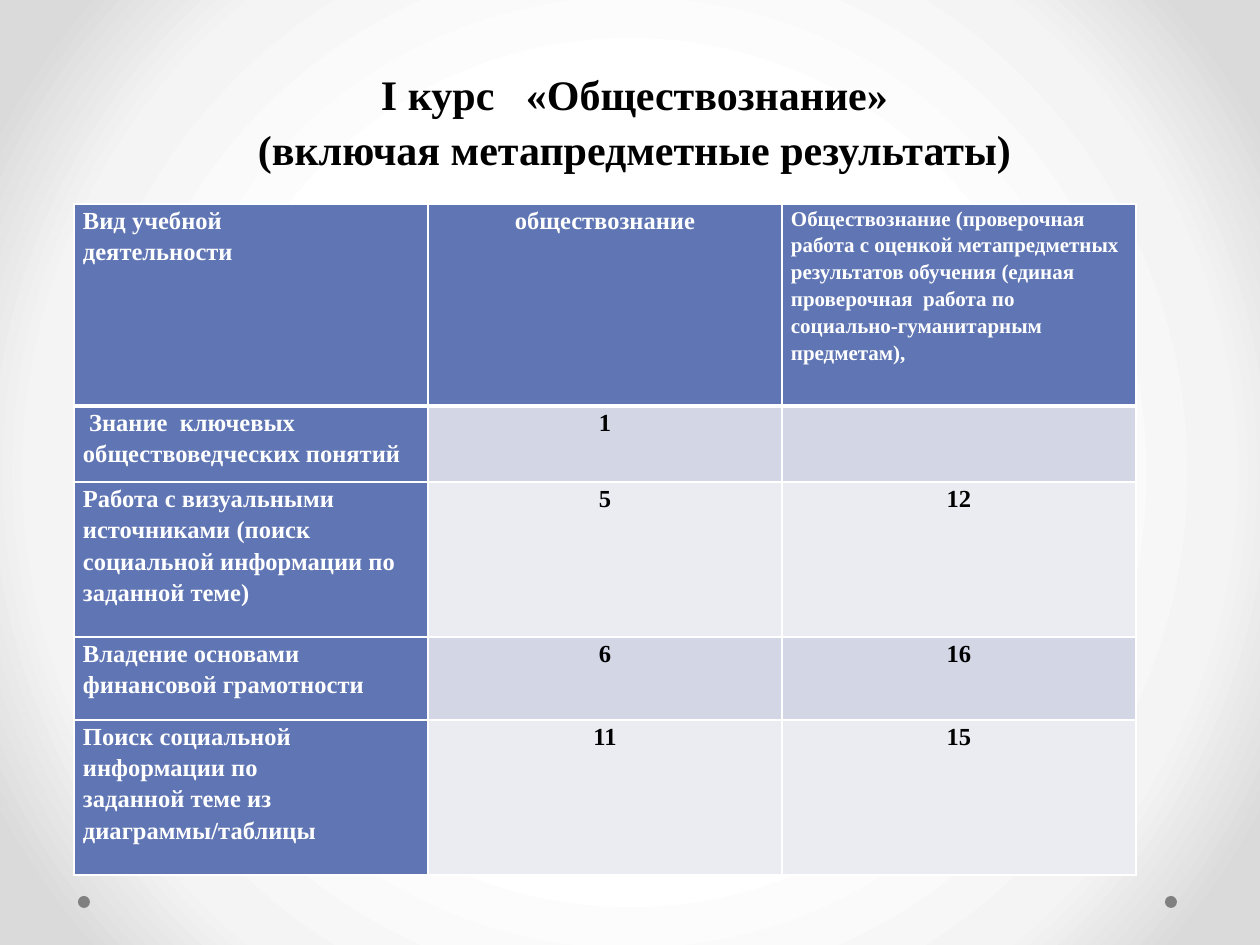
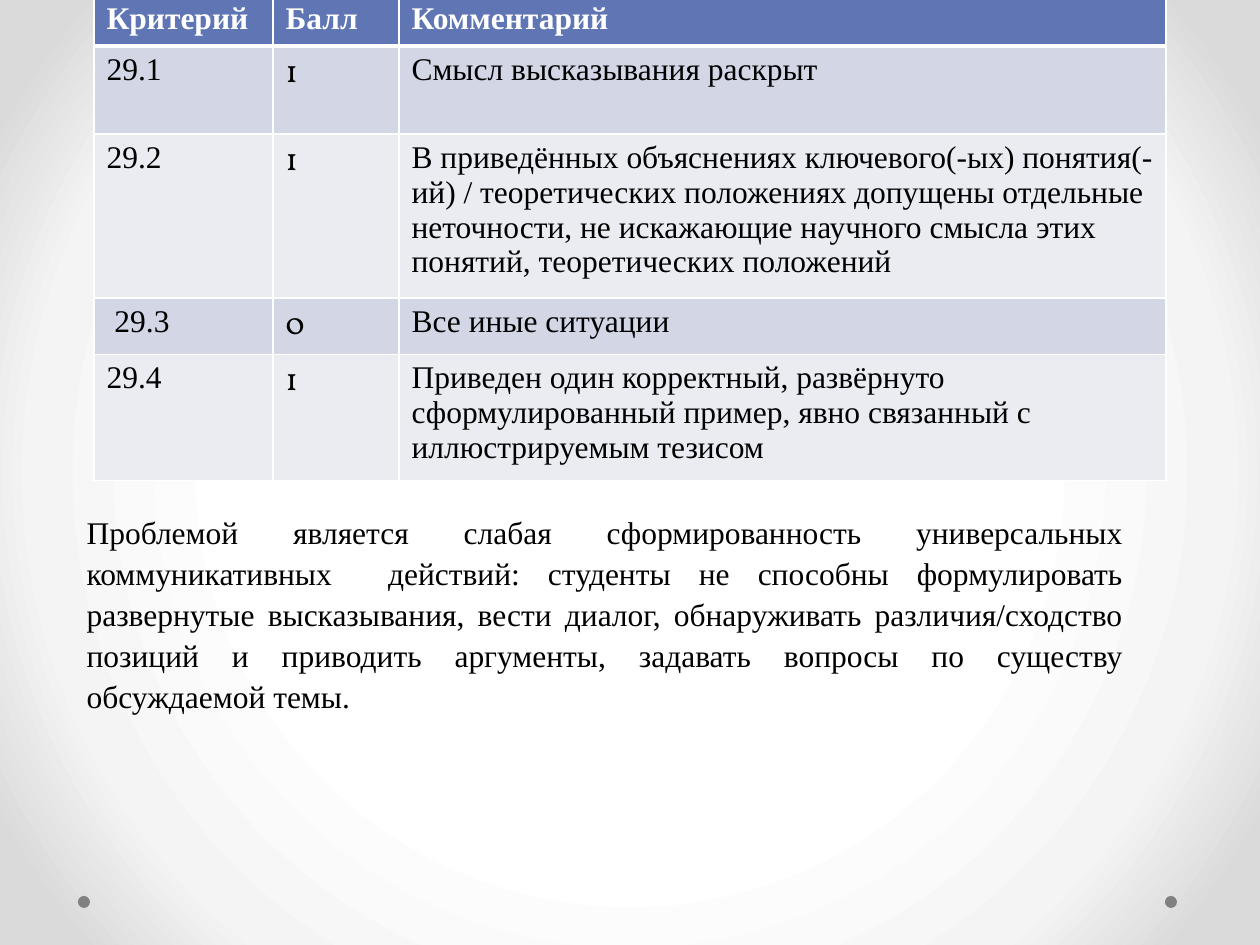
import pptx
import pptx.util
import pptx.dml.color
import pptx.enum.shapes
import pptx.enum.text
import lxml.etree
from pptx.oxml.ns import qn

ALIGN = pptx.enum.text.PP_ALIGN

# Content: a line break inside a cell starts a new paragraph
TITLE_LINES = ["I курс   «Обществознание»", "(включая метапредметные результаты)"]

ACTIVITY_ROWS = [
    ("Вид учебной\nдеятельности", "обществознание",
     "Обществознание (проверочная  работа с оценкой метапредметных результатов "
     "обучения (единая проверочная  работа по социально-гуманитарным предметам),"),
    (" Знание  ключевых обществоведческих понятий", "1", ""),
    ("Работа с визуальными источниками (поиск социальной информации по заданной теме)",
     "5", "12"),
    ("Владение основами финансовой грамотности", "6", "16"),
    ("Поиск социальной информации по\nзаданной теме из диаграммы/таблицы", "11", "15"),
]

CRITERIA_ROWS = [
    ("Критерий", "Балл", "Комментарий"),
    ("29.1", "1", "Смысл высказывания раскрыт"),
    ("29.2", "1",
     "В приведённых объяснениях ключевого(-ых) понятия(-ий) / теоретических положениях "
     "допущены отдельные неточности, не искажающие научного смысла этих понятий, "
     "теоретических положений"),
    (" 29.3", "0", "Все иные ситуации"),
    ("29.4", "1",
     "Приведен один корректный, развёрнуто сформулированный пример, явно связанный "
     "с иллюстрируемым тезисом"),
]

CONCLUSION = (
    "Проблемой является слабая сформированность универсальных коммуникативных  действий: "
    "студенты не способны формулировать развернутые высказывания, вести диалог, "
    "обнаруживать различия/сходство позиций и приводить аргументы, задавать вопросы "
    "по существу обсуждаемой темы.")


class Theme:
    font, score_font = "Times New Roman", "Vollkorn"
    black, white, dot = "000000", "FFFFFF", "808080"
    header, bands = "6076B4", ("EAECF2", "D2D6E5")
    backdrop = [(50, "FFFFFF"), (76, "F4F4F4"), (92, "DADADA")]
    title_size, body_size, cell_size, note_size = 24, 18, 14, 12
    text_spacing = 1.09
    border, header_border = 1, 3


def px(length):
    return pptx.util.Emu(round(length * 914400 / 126))


def rgb(code):
    return pptx.dml.color.RGBColor.from_string(code)


def place(shape, left, top, width, height):
    shape.left, shape.top = px(left), px(top)
    shape.width, shape.height = px(width), px(height)


def write(text_frame, text, size, color=Theme.black, font=Theme.font, bold=False,
          align=ALIGN.LEFT, spacing=1.0):
    for index, line in enumerate(text.split("\n")):
        paragraph = text_frame.paragraphs[0] if index == 0 else text_frame.add_paragraph()
        paragraph.alignment = align
        paragraph.line_spacing = spacing
        paragraph.space_before = pptx.util.Pt(0)
        if line:
            run = paragraph.add_run()
            run.text = line
            run.font.name, run.font.size = font, pptx.util.Pt(size)
            run.font.bold, run.font.color.rgb = bold, rgb(color)


def add_solid(parent, color, **attributes):
    element = lxml.etree.SubElement(parent, qn("a:solidFill"), **attributes)
    lxml.etree.SubElement(element, qn("a:srgbClr"), val=color)


def format_placeholder(shape, box):
    place(shape, *box)
    frame = shape.text_frame
    frame.word_wrap = True
    frame.auto_size = pptx.enum.text.MSO_AUTO_SIZE.NONE
    frame.vertical_anchor = pptx.enum.text.MSO_ANCHOR.TOP
    return frame


# Shared backdrop and corner dots live on the master
def style_master(presentation, slide):
    master = presentation.slide_master
    master.background.fill.gradient()
    gradient = master.element.find(".//" + qn("a:gradFill"))
    for child in list(gradient):
        gradient.remove(child)
    stops = lxml.etree.SubElement(gradient, qn("a:gsLst"))
    for position, color in Theme.backdrop:
        stop = lxml.etree.SubElement(stops, qn("a:gs"), pos=str(position * 1000))
        lxml.etree.SubElement(stop, qn("a:srgbClr"), val=color)
    circle = lxml.etree.SubElement(gradient, qn("a:path"), path="circle")
    lxml.etree.SubElement(circle, qn("a:fillToRect"),
                          **{side: "50000" for side in "ltrb"})
    for left in (78, 1165):
        dot = slide.shapes.add_shape(pptx.enum.shapes.MSO_SHAPE.OVAL,
                                     px(left), px(896), px(12), px(12))
        dot.shadow.inherit = False
        dot.fill.solid()
        dot.fill.fore_color.rgb = rgb(Theme.dot)
        dot.line.fill.background()
        master.shapes.element.append(dot.element)


def add_borders(frame, column_count):
    for index, properties in enumerate(frame.element.iter(qn("a:tcPr"))):
        row = index // column_count
        thick_side = {0: "lnB", 1: "lnT"}.get(row)
        for order, side in enumerate(("lnL", "lnR", "lnT", "lnB")):
            width = Theme.header_border if side == thick_side else Theme.border
            line = lxml.etree.Element(qn("a:" + side), w=str(pptx.util.Pt(width)))
            add_solid(line, Theme.white)
            properties.insert(order, line)


def add_table(slide, rows, left, top, widths, heights, cell_format,
              side_header=False, margins=None):
    frame = slide.shapes.add_table(len(rows), len(widths), px(left), px(top),
                                   px(sum(widths)), px(sum(heights)))
    table = frame.table
    for column, width in zip(table.columns, widths):
        column.width = px(width)
    for row, height in zip(table.rows, heights):
        row.height = px(height)
    for r, row in enumerate(rows):
        for c, text in enumerate(row):
            cell = table.cell(r, c)
            is_header = r == 0 or (side_header and c == 0)
            cell.fill.solid()
            cell.fill.fore_color.rgb = rgb(Theme.header if is_header else Theme.bands[r % 2])
            if margins:
                cell.margin_left = cell.margin_right = px(margins[0])
                cell.margin_top = cell.margin_bottom = px(margins[1])
            write(cell.text_frame, text, color=Theme.white if is_header else Theme.black,
                  **cell_format(r, c))
    add_borders(frame, len(widths))


def activity_format(row, column):
    centred = column == 1 or (column == 2 and row > 0)
    return dict(size=Theme.note_size if (row, column) == (0, 2) else Theme.cell_size,
                bold=True, spacing=1.15, align=ALIGN.CENTER if centred else ALIGN.LEFT)


def criteria_format(row, column):
    return dict(size=Theme.body_size, bold=row == 0,
                font=Theme.score_font if row and column == 1 else Theme.font)


def build_activity_slide(slide):
    title = slide.shapes.title
    frame = format_placeholder(title, (24, 58, 1191, 115))
    write(frame, "\n".join(TITLE_LINES), Theme.title_size, bold=True,
          align=ALIGN.CENTER, spacing=Theme.text_spacing)
    # The first line sits slightly right of the second
    next(title.element.iter(qn("a:pPr"))).set("marL", str(px(30)))
    add_table(slide, ACTIVITY_ROWS, 74, 204, [354] * 3, [202, 76, 155, 83, 155],
              activity_format, side_header=True, margins=(9, 0))


def build_criteria_slide(slide):
    title = slide.shapes.title
    title.element.getparent().remove(title.element)
    add_table(slide, CRITERIA_ROWS, 94, -5, [179, 126, 767], [51, 88, 164, 50, 126],
              criteria_format)
    body = slide.placeholders[1]
    frame = format_placeholder(body, (74, 503, 1062, 242))
    write(frame, CONCLUSION, Theme.body_size, align=ALIGN.JUSTIFY,
          spacing=Theme.text_spacing)
    for properties in body.element.iter(qn("a:pPr")):
        properties.set("marL", "0")
        properties.set("indent", "0")
        lxml.etree.SubElement(properties, qn("a:buNone"))


def main():
    presentation = pptx.Presentation()
    presentation.slide_width, presentation.slide_height = px(1260), px(945)
    layouts = presentation.slide_layouts
    activity_slide = presentation.slides.add_slide(layouts.get_by_name("Title Only"))
    criteria_slide = presentation.slides.add_slide(layouts.get_by_name("Title and Content"))
    style_master(presentation, activity_slide)
    build_activity_slide(activity_slide)
    build_criteria_slide(criteria_slide)
    presentation.save("out.pptx")


if __name__ == "__main__":
    main()
